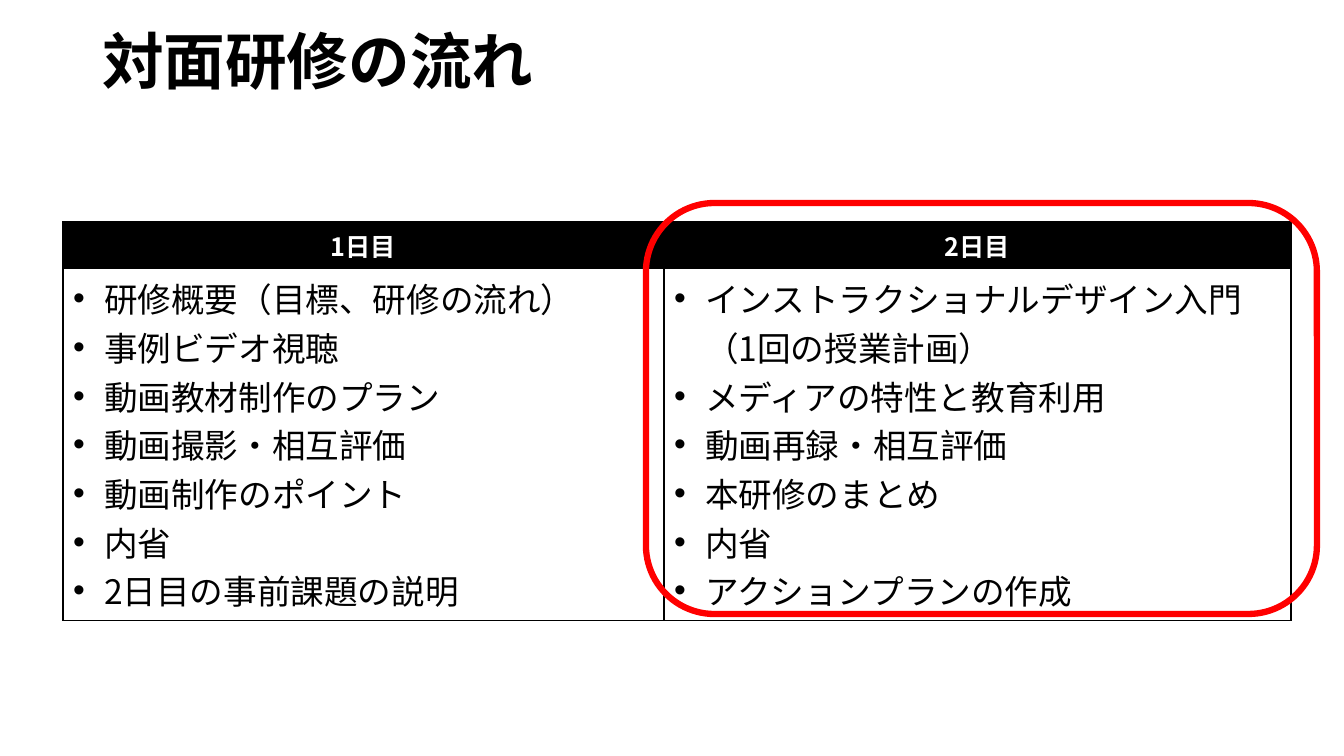
from dataclasses import dataclass

from lxml.etree import SubElement
from pptx import Presentation
from pptx.dml.color import RGBColor
from pptx.enum.shapes import MSO_SHAPE
from pptx.enum.text import MSO_ANCHOR, PP_ALIGN
from pptx.oxml import parse_xml
from pptx.oxml.ns import nsdecls, qn
from pptx.util import Emu, Pt


@dataclass(frozen=True)
class Theme:
    font: str = "Noto Sans CJK JP"
    black: str = "000000"
    white: str = "FFFFFF"
    highlight: str = "FF0000"
    title_size: int = 44
    header_size: int = 18
    body_size: int = 24
    border_width: float = 1
    highlight_width: float = 4.5


THEME = Theme()
EMU_PER_PX = 914400 / 100.8
BULLET_INDENT = 31

SCHEDULE = {
    "1日目": [
        "研修概要（目標、研修の流れ）",
        "事例ビデオ視聴",
        "動画教材制作のプラン",
        "動画撮影・相互評価",
        "動画制作のポイント",
        "内省",
        "2日目の事前課題の説明",
    ],
    "2日目": [
        "インストラクショナルデザイン入門（1回の授業計画）",
        "メディアの特性と教育利用",
        "動画再録・相互評価",
        "本研修のまとめ",
        "内省",
        "アクションプランの作成",
    ],
}


def px(length):
    return Emu(round(length * EMU_PER_PX))


def set_attributes(target, values):
    for name, value in values.items():
        setattr(target, name, value)


def write(paragraph, text, size, color, bold=False):
    run = paragraph.add_run()
    run.text = text
    run.font.color.rgb = RGBColor.from_string(color)
    set_attributes(run.font, {"name": THEME.font, "size": Pt(size), "bold": bold})
    east_asian = SubElement(run.font._element, qn("a:ea"))
    east_asian.set("typeface", THEME.font)


def add_bullet(paragraph):
    properties = paragraph._p.get_or_add_pPr()
    properties.set("marL", str(px(BULLET_INDENT)))
    properties.set("indent", str(-px(BULLET_INDENT)))
    SubElement(properties, qn("a:buFont")).set("typeface", "Arial")
    SubElement(properties, qn("a:buChar")).set("char", "•")


def add_borders(cell):
    """Put the four border lines ahead of the cell's fill, as the schema asks."""
    properties = cell._tc.get_or_add_tcPr()
    for position, side in enumerate(("lnL", "lnR", "lnT", "lnB")):
        border = parse_xml(
            f'<a:{side} {nsdecls("a")} w="{Pt(THEME.border_width)}"><a:solidFill>'
            f'<a:srgbClr val="{THEME.black}"/></a:solidFill></a:{side}>'
        )
        properties.insert(position, border)


def fill_header(cell, day):
    cell.fill.solid()
    cell.fill.fore_color.rgb = RGBColor.from_string(THEME.black)
    heading = cell.text_frame.paragraphs[0]
    heading.alignment = PP_ALIGN.CENTER
    write(heading, day, THEME.header_size, THEME.white, bold=True)


def fill_activities(cell, activities):
    cell.fill.background()
    frame = cell.text_frame
    for index, activity in enumerate(activities):
        paragraph = frame.add_paragraph() if index else frame.paragraphs[0]
        add_bullet(paragraph)
        write(paragraph, activity, THEME.body_size, THEME.black)


def add_title(slide, text):
    title = slide.shapes.title
    set_attributes(title, {"left": px(92), "top": px(15),
                           "width": px(1159), "height": px(99)})
    title.text_frame.vertical_anchor = MSO_ANCHOR.MIDDLE
    heading = title.text_frame.paragraphs[0]
    set_attributes(heading, {"alignment": PP_ALIGN.LEFT, "line_spacing": 0.9})
    write(heading, text, THEME.title_size, THEME.black, bold=True)


def add_schedule(slide, schedule):
    column_widths, row_heights = (601, 627), (46, 352)
    table = slide.shapes.add_table(
        len(row_heights), len(schedule), px(63), px(222),
        px(sum(column_widths)), px(sum(row_heights)),
    ).table
    for row, height in zip(table.rows, row_heights):
        row.height = px(height)
    for index, (day, activities) in enumerate(schedule.items()):
        table.columns[index].width = px(column_widths[index])
        fill_header(table.cell(0, index), day)
        fill_activities(table.cell(1, index), activities)
    for cell in table.iter_cells():
        add_borders(cell)


def add_highlight(slide, left, top, width, height):
    frame = slide.shapes.add_shape(
        MSO_SHAPE.ROUNDED_RECTANGLE, px(left), px(top), px(width), px(height)
    )
    frame.shadow.inherit = False
    frame.fill.background()
    frame.line.color.rgb = RGBColor.from_string(THEME.highlight)
    frame.line.width = Pt(THEME.highlight_width)


def main():
    presentation = Presentation()
    set_attributes(presentation, {"slide_width": px(1344), "slide_height": px(756)})
    slide = presentation.slides.add_slide(presentation.slide_layouts[5])
    add_title(slide, "対面研修の流れ")
    add_schedule(slide, SCHEDULE)
    add_highlight(slide, 646, 203, 671, 411)
    presentation.save("out.pptx")


if __name__ == "__main__":
    main()
